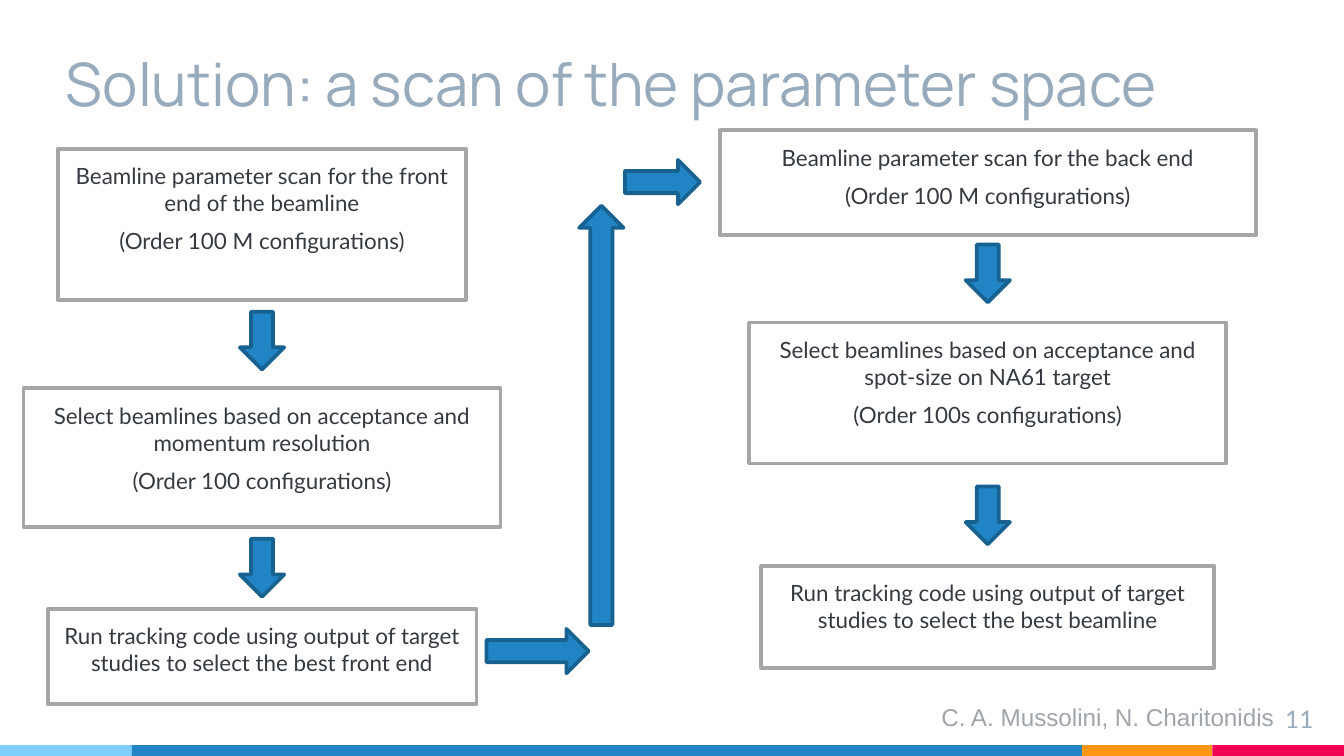
from pptx import Presentation
from pptx.dml.color import RGBColor
from pptx.enum.shapes import MSO_SHAPE
from pptx.enum.text import MSO_ANCHOR, MSO_AUTO_SIZE, PP_ALIGN
from pptx.util import Inches, Pt

RECT, DOWN = MSO_SHAPE.RECTANGLE, MSO_SHAPE.DOWN_ARROW
UP, RIGHT = MSO_SHAPE.UP_ARROW, MSO_SHAPE.RIGHT_ARROW
TOP, BOTTOM = MSO_ANCHOR.TOP, MSO_ANCHOR.BOTTOM
LEFT, CENTER, END = PP_ALIGN.LEFT, PP_ALIGN.CENTER, PP_ALIGN.RIGHT

WIDE = 10
HIGH = WIDE * 9 / 16

COLORS = {
    "sky": "7ECEFD", "blue": "2185C5", "orange": "FF9715", "red": "F20253",
    "edge": "186292", "frame": "A6A6A6", "title": "97ABBC",
    "text": "343A40", "credit": "9FA5AB",
}

TITLE = "Solution: a scan of the parameter space"
CREDIT = "C. A. Mussolini, N. Charitonidis"
PAGE = "11"

# Footer stripe: colour, width
BAND = 0.08
STRIPE = [("sky", 0.98), ("blue", 7.07), ("orange", 0.97), ("red", 0.98)]

# Each column: centre, steps (top, width, height, lines), tops of the arrows
COLUMNS = [
    (1.95, [
        (1.11, 3.04, 1.12, [
            "Beamline parameter scan for the front end of the beamline",
            "(Order 100 M configurations)"]),
        (2.89, 3.55, 1.03, [
            "Select beamlines based on acceptance and momentum resolution",
            "(Order 100 configurations)"]),
        (4.53, 3.19, 0.71, [
            "Run tracking code using output of target studies "
            "to select the best front end"]),
    ], [2.32, 4.01]),
    (7.35, [
        (0.97, 3.99, 0.78, [
            "Beamline parameter scan for the back end",
            "(Order 100 M configurations)"]),
        (2.4, 3.55, 1.05, [
            "Select beamlines based on acceptance and spot-size on NA61 target",
            "(Order 100s configurations)"]),
        (4.21, 3.37, 0.76, [
            "Run tracking code using output of target studies "
            "to select the best beamline"]),
    ], [1.82, 3.62]),
]

THICK, DROP = 0.33, 0.43
# Arrows that lead from the left column to the right one
LINKS = [
    (RIGHT, 3.62, 4.68, 0.76, THICK),
    (UP, 4.31, 1.53, THICK, 3.12),
    (RIGHT, 4.65, 1.19, 0.56, THICK),
]


def color(name):
    return RGBColor.from_string(COLORS[name])


def add_shape(kind, x, y, w, h, fill=None, line=None):
    shape = slide.shapes.add_shape(
        kind, Inches(x), Inches(y), Inches(w), Inches(h))
    shape.shadow.inherit = False
    if fill:
        shape.fill.solid()
        shape.fill.fore_color.rgb = color(fill)
    else:
        shape.fill.background()
    if line:
        shape.line.color.rgb = color(line)
        shape.line.width = Pt(2)
    else:
        shape.line.fill.background()
    return shape


def write(shape, lines, size, font, tint, align, anchor=TOP, before=0, pad=0.1):
    frame = shape.text_frame
    frame.word_wrap = True
    frame.auto_size = MSO_AUTO_SIZE.NONE
    frame.vertical_anchor = anchor
    frame.margin_left = frame.margin_right = Inches(0.1)
    frame.margin_top = frame.margin_bottom = Inches(pad)
    frame.text = "\n".join(lines)
    for para in frame.paragraphs:
        para.alignment = align
        para.space_before = Pt(before)
        para.font.size = Pt(size)
        para.font.name = font
        para.font.color.rgb = color(tint)


def add_label(x, y, w, h, text, **style):
    box = slide.shapes.add_textbox(Inches(x), Inches(y), Inches(w), Inches(h))
    write(box, [text], 13, **style)


deck = Presentation()
deck.slide_width, deck.slide_height = Inches(WIDE), Inches(HIGH)
slide = deck.slides.add_slide(deck.slide_layouts[5])

x = 0
for fill, width in STRIPE:
    add_shape(RECT, x, HIGH - BAND, width, BAND, fill)
    x += width

title = slide.shapes.title
title.left, title.top = Inches(0.39), Inches(0.04)
title.width, title.height = Inches(9.33), Inches(0.94)
write(title, [TITLE], 32, "Manrope", "title", LEFT, BOTTOM)

add_label(9.27, 5.14, 0.6, 0.34, PAGE, font="Lato", tint="title", align=END)
add_label(6.68, 5.15, 3.12, 0.34, CREDIT, font="Arial", tint="credit",
          align=CENTER, anchor=BOTTOM, pad=0.05)

for mid, steps, drops in COLUMNS:
    for top, width, height, lines in steps:
        box = add_shape(RECT, mid - width / 2, top, width, height, line="frame")
        write(box, lines, 12, "Lato", "text", CENTER, before=6)
    for top in drops:
        add_shape(DOWN, mid - THICK / 2, top, THICK, DROP, "blue", "edge")

for link in LINKS:
    add_shape(*link, "blue", "edge")

deck.save("out.pptx")
